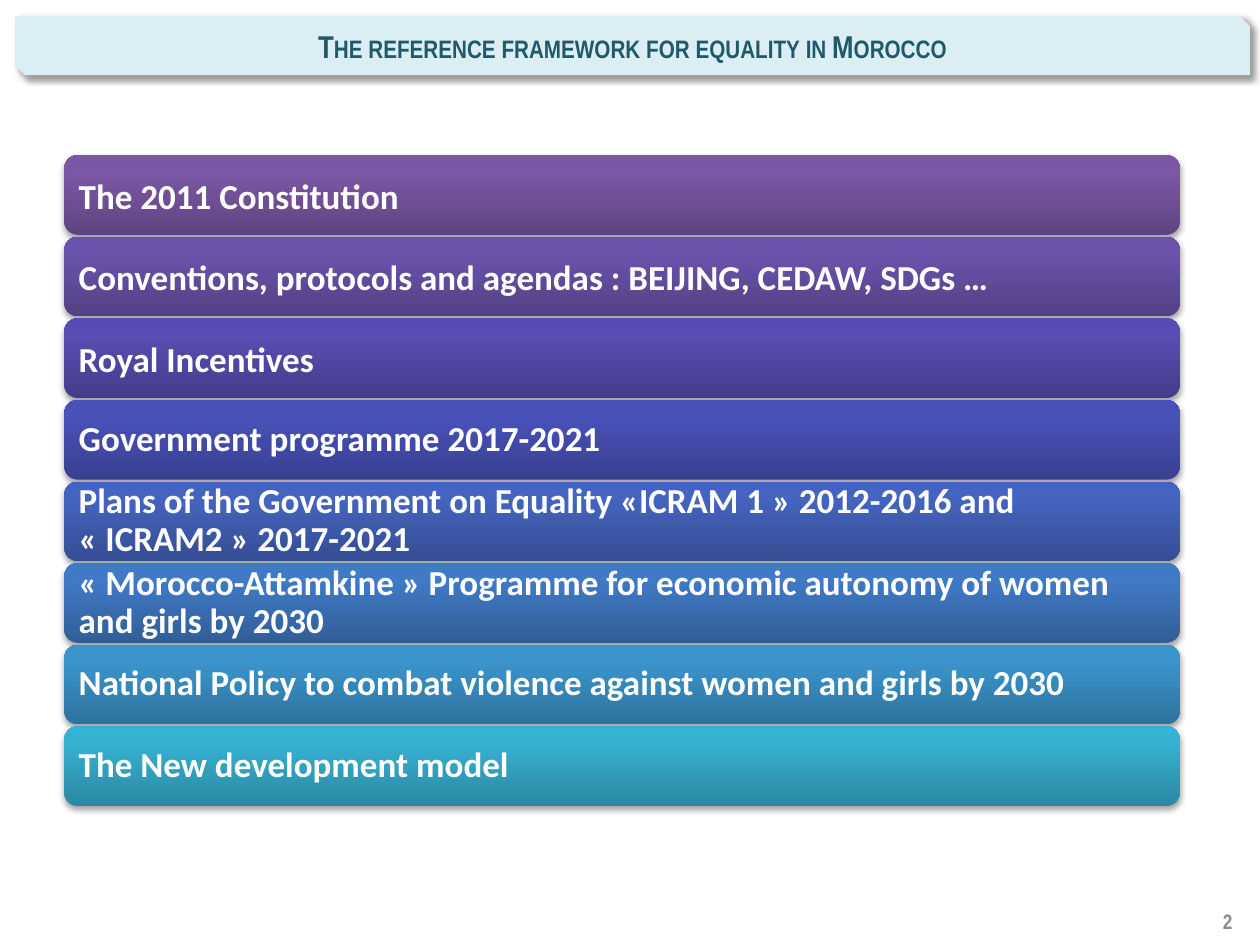
from copy import deepcopy
from dataclasses import dataclass

from pptx import Presentation
from pptx.dml.color import RGBColor
from pptx.enum.shapes import MSO_SHAPE
from pptx.enum.text import MSO_ANCHOR, MSO_AUTO_SIZE, PP_ALIGN
from pptx.oxml import parse_xml
from pptx.oxml.ns import nsdecls, qn
from pptx.util import Pt

ROUND = MSO_SHAPE.ROUNDED_RECTANGLE
SNIP = MSO_SHAPE.SNIP_2_DIAG_RECTANGLE
MIDDLE = MSO_ANCHOR.MIDDLE
NO_FIT = MSO_AUTO_SIZE.NONE
LEFT, CENTER, RIGHT = PP_ALIGN.LEFT, PP_ALIGN.CENTER, PP_ALIGN.RIGHT
HARD = chr(160)  # no-break space


@dataclass(frozen=True)
class Theme:
    banner: str = "DBEEF4"
    title: str = "215968"
    number: str = "8C8C8C"
    light: str = "FFFFFF"
    shade: str = "000000"
    head_font: str = "Arial Narrow"
    body_font: str = "Calibri"
    title_size: float = 18
    body_size: float = 20
    number_size: float = 12


@dataclass(frozen=True)
class Box:
    left: float
    top: float
    width: float
    height: float

    def points(self) -> tuple:
        return Pt(self.left), Pt(self.top), Pt(self.width), Pt(self.height)


@dataclass(frozen=True)
class Shadow:
    alpha: int
    blur: float
    dist: float
    angle: int


@dataclass(frozen=True)
class Bar:
    text: str
    dark: str
    mid: str
    top: str
    tight: bool = True


THEME = Theme()
BANNER = Box(8.6, 9.2, 705.6, 33.8)
NUMBER = Box(543.6, 511.9, 167.8, 28.8)
FIRST = Box(36.8, 88.7, 637.4, 45.5)
PITCH = 46.63
BANNER_SHADOW = Shadow(40, 4, 3, 45)
BAR_SHADOW = Shadow(35, 3.1, 1.8, 90)
BARS = [
    Bar("The 2011 Constitution", "5F4480", "7B58A6", "7C57A8", False),
    Bar("Conventions, protocols and agendas : BEIJING, CEDAW, SDGs …",
        "534085", "6B53AC", "6B52AF", False),
    Bar("Royal Incentives", "443C8A", "584EB3", "574CB6", False),
    Bar("Government programme 2017-2021", "383F8F", "4952B9", "4751BC"),
    Bar("Plans of the Government on Equality «ICRAM 1 » 2012-2016 and "
        f"«{HARD}ICRAM2{HARD}» 2017-2021", "354D93", "4564BF", "4263C3"),
    Bar(f"«{HARD}Morocco-Attamkine{HARD}» Programme for economic autonomy "
        "of women and girls by 2030", "315E98", "407AC6", "3E7AC9"),
    Bar("National Policy to combat violence against women and girls by 2030",
        "2E729D", "3B94CC", "3995CF"),
    Bar("The New development model", "2A88A2", "37B1D2", "34B4D6"),
]


def write(shape, text: str, *, font: str, size: float, color: str,
          align=LEFT, side: float = 7.2, rise: float = 3.6,
          caps: bool = False, tight: bool = False) -> None:
    frame = shape.text_frame
    frame.word_wrap = True
    frame.auto_size = NO_FIT
    frame.vertical_anchor = MIDDLE
    frame.margin_left = frame.margin_right = Pt(side)
    frame.margin_top = frame.margin_bottom = Pt(rise)
    para = frame.paragraphs[0]
    para.alignment = align
    if tight:
        para.line_spacing = 0.9
        para.space_after = Pt(7)
    run = para.add_run()
    run.text = text
    run.font.name = font
    run.font.size = Pt(size)
    run.font.bold = True
    run.font.color.rgb = RGBColor.from_string(color)
    if caps:
        run.font._element.set("cap", "small")


def cast(shape, shadow: Shadow) -> None:
    """Give the shape an outer shadow."""
    shape.shadow.inherit = False
    effects = shape._element.spPr.find(qn("a:effectLst"))
    effects.append(parse_xml(
        f'<a:outerShdw {nsdecls("a")} blurRad="{Pt(shadow.blur)}" '
        f'dist="{Pt(shadow.dist)}" dir="{shadow.angle * 60000}" '
        f'algn="ctr" rotWithShape="0"><a:srgbClr val="{THEME.shade}">'
        f'<a:alpha val="{shadow.alpha * 1000}"/></a:srgbClr></a:outerShdw>'))


def blend(shape, bar: Bar) -> None:
    """Fill from dark at the foot to bright at the top."""
    fill = shape.fill
    fill.gradient()
    fill.gradient_angle = 90
    stops = shape._element.spPr.find(".//" + qn("a:gsLst"))
    stops.append(deepcopy(stops[0]))
    colors = (bar.dark, bar.mid, bar.top)
    for stop, place, color in zip(fill.gradient_stops, (0, 0.8, 1), colors):
        stop.position = place
        stop.color.rgb = RGBColor.from_string(color)


def draw_title(slide, text: str) -> None:
    """Set the title over a banner with two cut corners."""
    title = slide.shapes.title
    title.left, title.top, title.width, title.height = BANNER.points()
    write(title, text, font=THEME.head_font, size=THEME.title_size,
          color=THEME.title, align=CENTER, caps=True)
    banner = slide.shapes.add_shape(SNIP, *BANNER.points())
    banner.fill.solid()
    banner.fill.fore_color.rgb = RGBColor.from_string(THEME.banner)
    banner.line.fill.background()
    cast(banner, BANNER_SHADOW)
    title._element.addprevious(banner._element)


def draw_bar(slide, bar: Bar, box: Box) -> None:
    shape = slide.shapes.add_shape(ROUND, *box.points())
    blend(shape, bar)
    shape.line.fill.background()
    cast(shape, BAR_SHADOW)
    write(shape, bar.text, font=THEME.body_font, size=THEME.body_size,
          color=THEME.light, side=6, rise=0, tight=bar.tight)


def main() -> None:
    deck = Presentation()
    deck.slide_width, deck.slide_height = Pt(720), Pt(540)
    slide = deck.slides.add_slide(deck.slide_layouts[5])
    draw_title(slide, "The reference framework for equality in Morocco")
    number = slide.shapes.add_textbox(*NUMBER.points())
    write(number, "2", font=THEME.head_font, size=THEME.number_size,
          color=THEME.number, align=RIGHT)
    for row, bar in enumerate(BARS):
        top = FIRST.top + row * PITCH
        draw_bar(slide, bar, Box(FIRST.left, top, FIRST.width, FIRST.height))
    deck.save("out.pptx")


if __name__ == "__main__":
    main()
